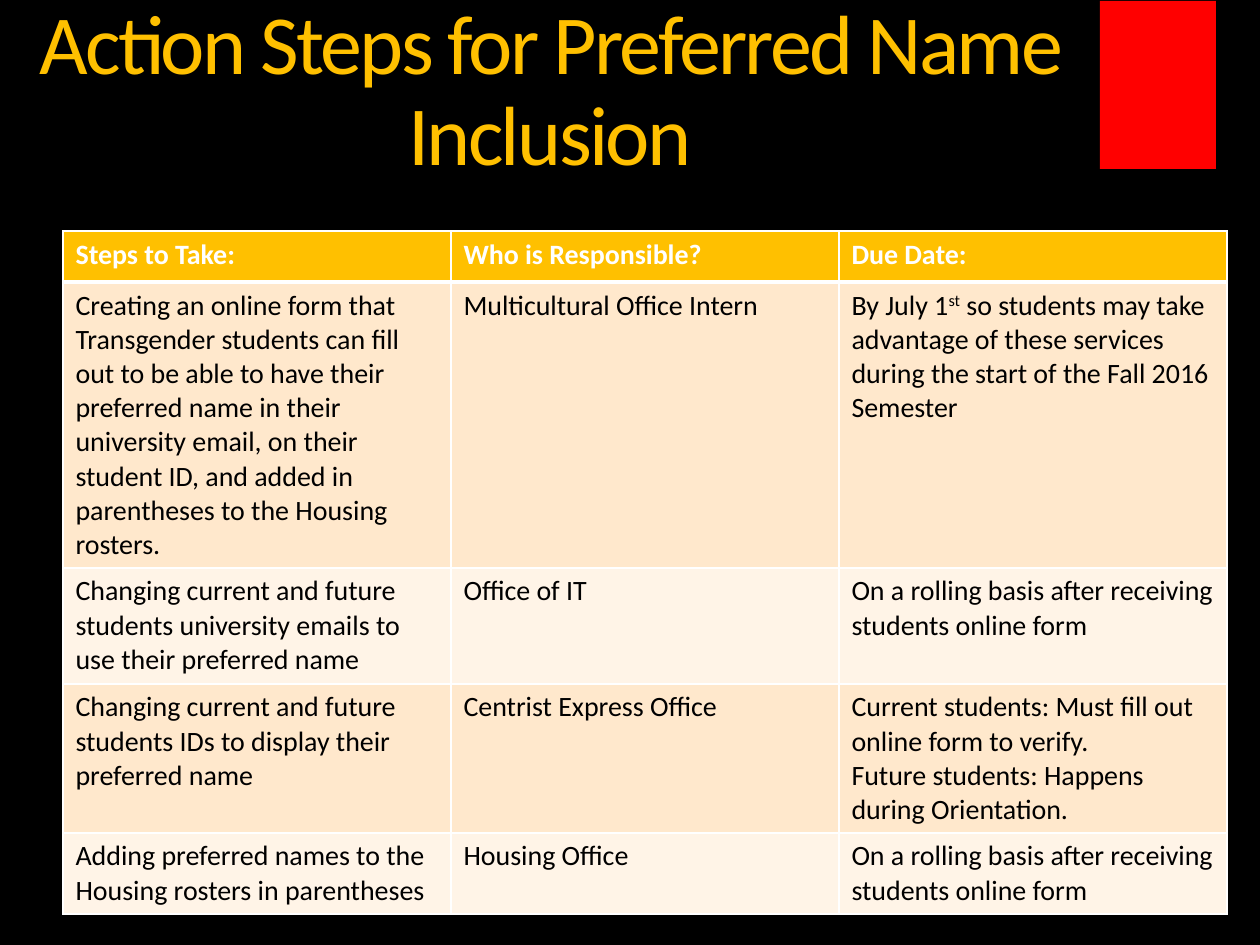
from dataclasses import dataclass
from typing import Any

from lxml.etree import SubElement as Sub
from pptx import Presentation
from pptx.dml.color import RGBColor as Rgb
from pptx.enum.shapes import MSO_SHAPE as Shape
from pptx.enum.text import MSO_ANCHOR as Anchor, MSO_AUTO_SIZE as Fit, PP_ALIGN as Align
from pptx.oxml.ns import qn
from pptx.util import Inches, Pt

SCALE = Inches(1) / 126
HUES = {
    "back": "000000",
    "gold": "FFC000",
    "red": "FF0000",
    "white": "FFFFFF",
    "ink": "000000",
    "peach": "FFE8CC",
    "cream": "FFF4E7",
}
COL = 388
HEAD = "Action Steps for Preferred Name Inclusion"


@dataclass
class Row:
    high: int
    fill: str
    texts: tuple[str, str, str]


ROLLING = "On a rolling basis after receiving students online form"
ROWS = [
    Row(51, "gold", ("Steps to Take:", "Who is Responsible?", "Due Date:")),
    Row(286, "peach", (
        "Creating an online form that Transgender students can fill out to be able to have "
        "their preferred name in their university email, on their student ID, and added in "
        "parentheses to the Housing rosters.",
        "Multicultural Office Intern",
        "By July 1^st^ so students may take advantage of these services during the start "
        "of the Fall 2016 Semester",
    )),
    Row(116, "cream", (
        "Changing current and future students university emails to use their preferred name",
        "Office of IT",
        ROLLING,
    )),
    Row(149, "peach", (
        "Changing current and future students IDs to display their preferred name",
        "Centrist Express Office",
        "Current students: Must fill out online form to verify.\n"
        "Future students: Happens during Orientation.",
    )),
    Row(81, "cream", (
        "Adding preferred names to the Housing rosters in parentheses",
        "Housing Office",
        ROLLING,
    )),
]


def px(num: int) -> int:
    return round(num * SCALE)


def hue(name: str) -> Rgb:
    return Rgb.from_string(HUES[name])


def apply(item: Any, style: dict[str, Any]) -> None:
    for key, val in style.items():
        setattr(item, key, val)


def paint(fill: Any, name: str) -> None:
    fill.solid()
    fill.fore_color.rgb = hue(name)


def write(para: Any, text: str, tone: str, style: dict[str, Any]) -> None:
    for spot, part in enumerate(text.split("^")):
        run = para.add_run()
        run.text = part
        apply(run.font, {"name": "Calibri", **style})
        run.font.color.rgb = hue(tone)
        if spot % 2:
            run._r.get_or_add_rPr().set("baseline", "30000")


def edge(cell: Any, sides: dict[str, int]) -> None:
    props = cell._tc.get_or_add_tcPr()
    for side, wide in sides.items():
        line = Sub(props, qn(f"a:ln{side}"), w=str(Pt(wide)))
        fill = Sub(line, qn("a:solidFill"))
        Sub(fill, qn("a:srgbClr"), val=HUES["white"])


def add_title(slide: Any) -> None:
    title = slide.shapes.title
    apply(title, {"left": 0, "top": px(1), "width": px(1100), "height": px(183)})
    frame = title.text_frame
    apply(frame, {
        "margin_left": 0, "margin_top": 0, "margin_right": 0, "margin_bottom": 0,
        "word_wrap": True, "auto_size": Fit.SHAPE_TO_FIT_TEXT,
        "vertical_anchor": Anchor.MIDDLE,
    })
    para = frame.paragraphs[0]
    apply(para, {"alignment": Align.CENTER, "line_spacing": 0.9})
    write(para, HEAD, "gold", {"size": Pt(48)})
    para.runs[0]._r.get_or_add_rPr().set("spc", "-150")


def add_grid(slide: Any) -> None:
    cols = len(ROWS[0].texts)
    high = sum(row.high for row in ROWS)
    grid = slide.shapes.add_table(
        len(ROWS), cols, px(63), px(231), px(COL * cols), px(high)
    ).table
    for col in grid.columns:
        col.width = px(COL)
    for y, row in enumerate(ROWS):
        grid.rows[y].height = px(row.high)
        first = y == 0
        sides = {"L": 1, "R": 1, "T": 3 if y == 1 else 1, "B": 3 if first else 1}
        for x, text in enumerate(row.texts):
            cell = grid.cell(y, x)
            edge(cell, sides)
            paint(cell.fill, row.fill)
            for spot, line in enumerate(text.split("\n")):
                frame = cell.text_frame
                para = frame.add_paragraph() if spot else frame.paragraphs[0]
                write(para, line, "white" if first else "ink", {"size": Pt(16), "bold": first})


def add_block(slide: Any) -> None:
    block = slide.shapes.add_shape(Shape.RECTANGLE, px(1100), px(1), px(116), px(168))
    block.shadow.inherit = False
    paint(block.fill, "red")
    block.line.fill.background()


def main() -> None:
    deck = Presentation()
    apply(deck, {"slide_width": px(1260), "slide_height": px(945)})
    slide = deck.slides.add_slide(deck.slide_layouts[5])
    paint(slide.background.fill, "back")
    add_title(slide)
    add_grid(slide)
    add_block(slide)
    deck.save("out.pptx")


if __name__ == "__main__":
    main()
